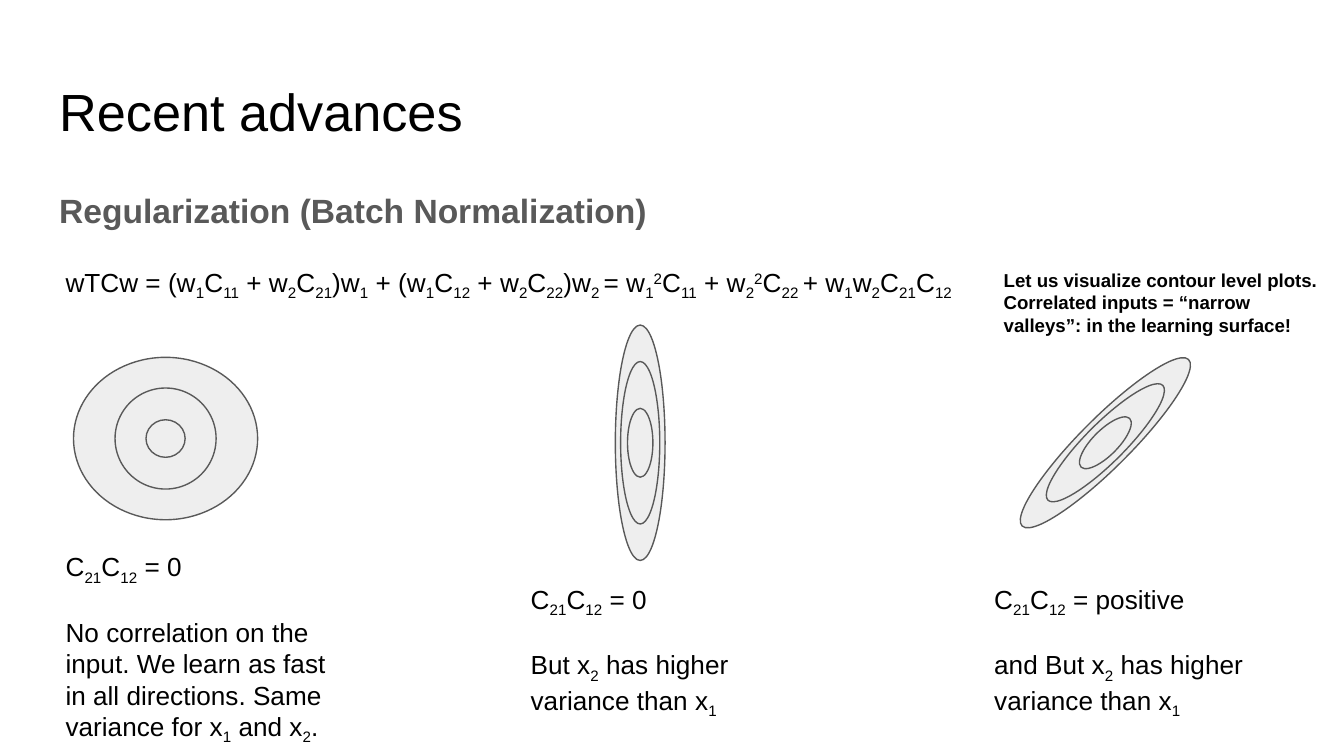
from pptx import Presentation
from pptx.dml.color import RGBColor
from pptx.enum import shapes, text
from pptx.util import Cm, Pt

BLACK, GREY, PALE = "000000", "595959", "EEEEEE"
NARROW = [(0.94, 4.45), (0.74, 3.07), (0.48, 1.3)]
ROUND = [(3.48, 3.07), (1.91, 1.91), (0.74, 0.71)]
FORMULA = ("wTCw = (w_1_C_11_ + w_2_C_21_)w_1_ + (w_1_C_12_ + w_2_C_22_)w_2 _"
           "= w_1__^2_C_11_ + w_2__^2_C_22 _+ w_1_w_2_C_21_C_12_")


def rgb(value):
    return RGBColor.from_string(value)


def add_runs(p, line, size, color, bold):
    """Odd parts between underscores are lowered, or raised if they begin with ^."""
    for i, part in enumerate(line.split("_")):
        if not part:
            continue
        r = p.add_run()
        r.text = part.lstrip("^")
        for name, value in dict(name="Arial", size=Pt(size), bold=bold).items():
            setattr(r.font, name, value)
        r.font.color.rgb = rgb(color)
        if i % 2:
            baseline = "30000" if part.startswith("^") else "-25000"
            r._r.get_or_add_rPr().set("baseline", baseline)


def add_text(s, box, lines, size=14, color=BLACK, bold=False, **paragraph_format):
    tf = s.shapes.add_textbox(*map(Cm, box)).text_frame
    frame_format = dict(word_wrap=True, vertical_anchor=text.MSO_ANCHOR.TOP)
    frame_format.update((f"margin_{side}", Cm(0.25))
                        for side in ("left", "top", "right", "bottom"))
    for name, value in frame_format.items():
        setattr(tf, name, value)
    for i, line in enumerate(lines):
        p = tf.add_paragraph() if i else tf.paragraphs[0]
        for name, value in paragraph_format.items():
            setattr(p, name, value)
        add_runs(p, line, size, color, bold)
    return tf


def heading(s, box):
    left, top, width = box
    add_text(s, (left, top, width, 1.6), ["Recent advances"], size=28)
    add_text(s, (left, top + 1.98, width, 3.35), ["Regularization (Batch Normalization)"],
             size=18, color=GREY, bold=True, line_spacing=1.15)


def contours(s, cx, cy, sizes, rotation):
    """Nested ellipses around one centre, from the outermost inwards."""
    for w, h in sizes:
        sp = s.shapes.add_shape(shapes.MSO_SHAPE.OVAL, Cm(cx - w / 2), Cm(cy - h / 2),
                                Cm(w), Cm(h))
        sp.rotation = rotation
        sp.shadow.inherit = False
        sp.fill.solid()
        sp.fill.fore_color.rgb = rgb(PALE)
        sp.line.color.rgb = rgb(GREY)
        sp.line.width = Pt(0.75)


def contour_column(s, box, centre, sizes, rotation, caption):
    """Contour plot inside the box, with its caption below the box."""
    left, top, width, height = box
    contours(s, left + centre, top + 2.22, sizes, rotation)
    tf = add_text(s, (left, top + height, width, 1.57), caption)
    tf.paragraphs[1].space_before = Pt(16)


def main():
    prs = Presentation()
    prs.slide_width, prs.slide_height = Cm(25.4), Cm(14.29)
    s = prs.slides.add_slide(prs.slide_layouts[6])

    heading(s, (0.87, 1.24, 23.67))
    add_text(s, (0.99, 4.78, 22.89, 1.57), [FORMULA])
    add_text(s, (18.72, 4.83, 6.53, 1.57),
             ["Let us visualize contour level plots.",
              "Correlated inputs = “narrow valleys”: in the learning surface!"],
             size=10, bold=True)

    contour_column(s, (0.99, 6.07, 5.84, 4.09), 2.14, ROUND, 0,
                   ["C_21_C_12_ = 0",
                    "No correlation on the input. We learn as fast in all directions. "
                    "Same variance for x_1_ and x_2_."])
    contour_column(s, (9.78, 6.15, 5.84, 4.62), 2.32, NARROW, 0,
                   ["C_21_C_12_ = 0", "But x_2_ has higher variance than x_1_"])
    contour_column(s, (18.54, 6.15, 5.84, 4.62), 2.35, NARROW, 45,
                   ["C_21_C_12_ = positive", "and But x_2_ has higher variance than x_1_"])

    prs.save("out.pptx")


if __name__ == "__main__":
    main()
